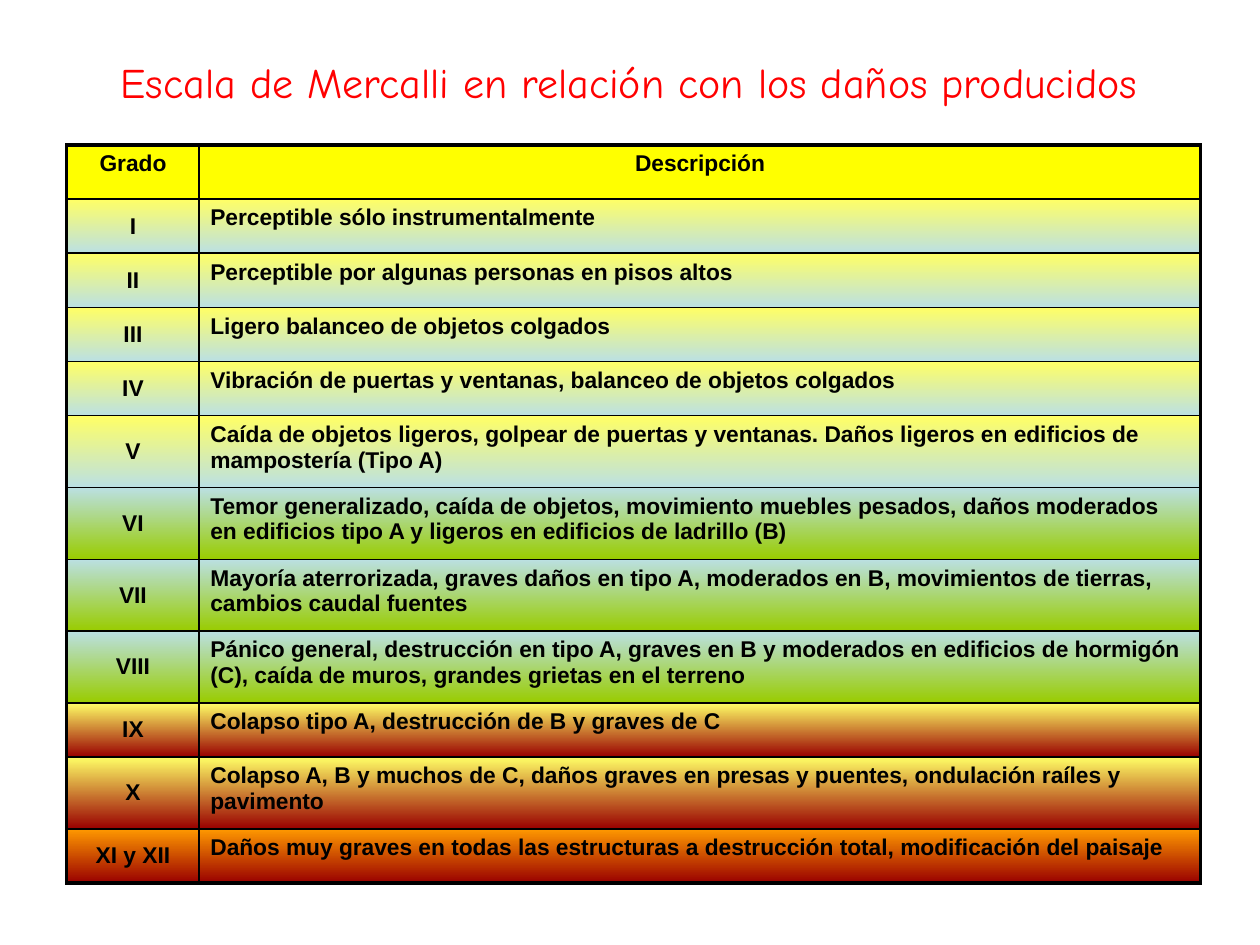
import pptx
import pptx.util
import pptx.dml.color
import pptx.enum.text
import pptx.oxml
import pptx.oxml.ns

Inches = pptx.util.Inches
Pt = pptx.util.Pt
RGBColor = pptx.dml.color.RGBColor
PP_ALIGN = pptx.enum.text.PP_ALIGN
MSO_ANCHOR = pptx.enum.text.MSO_ANCHOR

BLACK = RGBColor(0x00, 0x00, 0x00)
RED = RGBColor(0xFF, 0x00, 0x00)
YELLOW = RGBColor(0xFF, 0xFF, 0x00)
LEMON = RGBColor(0xFF, 0xFF, 0x66)
PALE_BLUE = RGBColor(0xBB, 0xE0, 0xE3)
GREEN = RGBColor(0x99, 0xCC, 0x00)
ORANGE = RGBColor(0xFF, 0x99, 0x00)
DARK_RED = RGBColor(0x99, 0x00, 0x00)

MILD = (LEMON, PALE_BLUE)
MODERATE = (PALE_BLUE, GREEN)
SEVERE = (LEMON, DARK_RED)
EXTREME = (ORANGE, DARK_RED)
SHORT, TALL = 0.43, 0.57
THIN, THICK = 1, 2.25

ROWS = [
    ("Grado", "Descripción", SHORT, None),
    ("I", "Perceptible sólo instrumentalmente", SHORT, MILD),
    ("II", "Perceptible por algunas personas en pisos altos", SHORT, MILD),
    ("III", "Ligero balanceo de objetos colgados", SHORT, MILD),
    ("IV", "Vibración de puertas y ventanas, balanceo de objetos colgados", SHORT, MILD),
    ("V", "Caída de objetos ligeros, golpear de puertas y ventanas. "
          "Daños ligeros en edificios de mampostería (Tipo A)", TALL, MILD),
    ("VI", "Temor generalizado, caída de objetos, movimiento muebles pesados, daños moderados "
           "en edificios tipo A y ligeros en edificios de ladrillo (B)", TALL, MODERATE),
    ("VII", "Mayoría aterrorizada, graves daños en tipo A, moderados en B, "
            "movimientos de tierras, cambios caudal fuentes", TALL, MODERATE),
    ("VIII", "Pánico general, destrucción en tipo A, graves en B y moderados en edificios "
             "de hormigón (C), caída de muros, grandes grietas en el terreno", TALL, MODERATE),
    ("IX", "Colapso tipo A, destrucción de B y graves de C", SHORT, SEVERE),
    ("X", "Colapso A, B y muchos de C, daños graves en presas y puentes, "
          "ondulación raíles y pavimento", TALL, SEVERE),
    ("XI y XII", "Daños muy graves en todas las estructuras a destrucción total, "
                 "modificación del paisaje", SHORT, EXTREME),
]


def add_border(cell, side, width):
    cell._tc.get_or_add_tcPr().append(pptx.oxml.parse_xml(
        f'<a:{side} {pptx.oxml.ns.nsdecls("a")} w="{Pt(width)}">'
        f'<a:solidFill><a:srgbClr val="{BLACK}"/></a:solidFill></a:{side}>'))


def add_span(para, text, font, size, color, bold):
    span = para.add_run()
    span.text = text
    span.font.name = font
    span.font.size = Pt(size)
    span.font.color.rgb = color
    span.font.bold = bold


deck = pptx.Presentation()
deck.slide_width = Inches(10)
deck.slide_height = Inches(7.5)
page = deck.slides.add_slide(deck.slide_layouts[6])

frame = page.shapes.add_table(len(ROWS), 2, Inches(0.53), Inches(1.15),
                              Inches(9), Inches(sum(row[2] for row in ROWS)))
table = frame.table
table.first_row = False
table.horz_banding = False
table.columns[0].width = Inches(1.05)
table.columns[1].width = Inches(7.95)

last = len(ROWS) - 1
for index, (grade, description, height, colors) in enumerate(ROWS):
    table.rows[index].height = Inches(height)
    for column, text in enumerate((grade, description)):
        cell = table.cell(index, column)
        cell.margin_left = cell.margin_right = Inches(0.09)
        cell.margin_top = cell.margin_bottom = Inches(0.05)
        add_border(cell, "lnL", THICK if column == 0 else THIN)
        add_border(cell, "lnR", THICK if column == 1 else THIN)
        add_border(cell, "lnT", THICK if index == 0 else THIN)
        add_border(cell, "lnB", THICK if index == last else THIN)
        if colors:
            cell.fill.gradient()
            cell.fill.gradient_angle = 270
            for stop, color in zip(cell.fill.gradient_stops, colors):
                stop.color.rgb = color
        else:
            cell.fill.solid()
            cell.fill.fore_color.rgb = YELLOW
        centered = index == 0 or column == 0
        cell.vertical_anchor = MSO_ANCHOR.MIDDLE if index and column == 0 else MSO_ANCHOR.TOP
        para = cell.text_frame.paragraphs[0]
        para.alignment = PP_ALIGN.CENTER if centered else PP_ALIGN.LEFT
        add_span(para, text, "Arial", 13, BLACK, True)

title = page.shapes.add_textbox(Inches(0.86), Inches(0.39), Inches(8.5), Inches(0.46))
box = title.text_frame
box.word_wrap = True
box.auto_size = pptx.enum.text.MSO_AUTO_SIZE.SHAPE_TO_FIT_TEXT
box.vertical_anchor = MSO_ANCHOR.MIDDLE
box.margin_left = box.margin_right = Inches(0.1)
box.margin_top = Inches(0.05)
box.margin_bottom = Inches(0)
add_span(box.paragraphs[0], "Escala de Mercalli en relación con los daños producidos",
         "Comic Neue", 24, RED, False)

deck.save("out.pptx")
